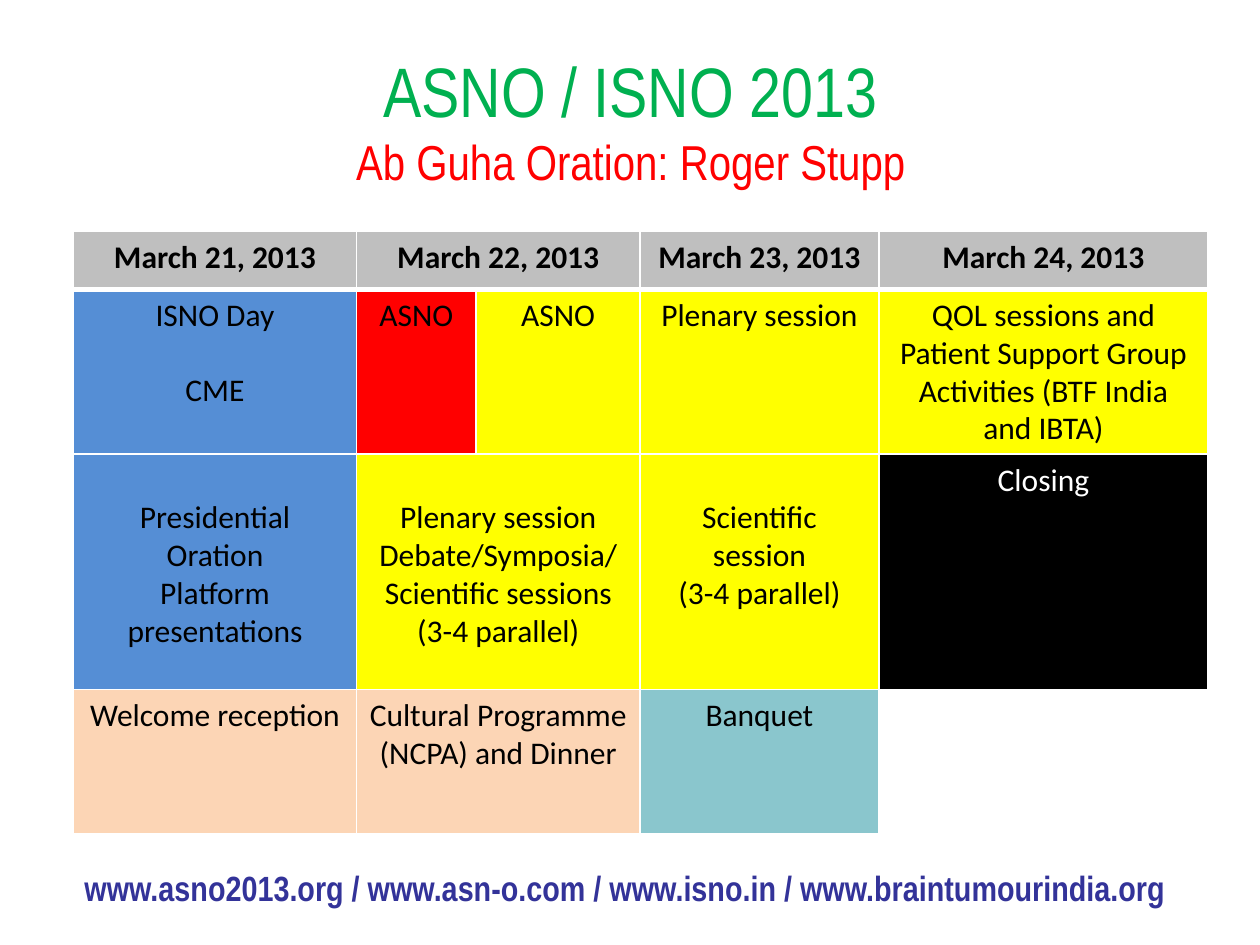
from lxml import etree
from pptx import Presentation
from pptx import util as u
from pptx.dml.color import RGBColor
from pptx.enum import shapes, text
from pptx.oxml.ns import qn


def color(value):
    return RGBColor.from_string(value)


def write(frame, words, size=18, font="Calibri", ink="000000", bold=False, spacing=None, gap=0):
    frame.word_wrap = True
    for i, line in enumerate(words.split("\n")):
        paragraph = frame.paragraphs[0]
        if paragraph.runs:
            paragraph = frame.add_paragraph()
        paragraph.alignment = text.PP_ALIGN.CENTER
        if spacing:
            paragraph.line_spacing = spacing
        if i and gap:
            paragraph.space_before = u.Pt(gap)
        run = paragraph.add_run()
        run.text = line
        run.font.size = u.Pt(size)
        run.font.name = font
        run.font.bold = bold
        run.font.color.rgb = color(ink)


deck = Presentation()
deck.slide_width, deck.slide_height = u.Cm(25.4), u.Cm(19.05)
slide = deck.slides.add_slide(deck.slide_layouts[6])

heading = slide.shapes.add_shape(
    shapes.MSO_SHAPE.RECTANGLE, u.Cm(1.09), u.Cm(0.81), u.Cm(23.24), u.Cm(3.18))
heading.shadow.inherit = False
heading.fill.solid()
heading.fill.fore_color.rgb = color("FFFFFF")
heading.line.fill.background()
heading.text_frame.vertical_anchor = text.MSO_ANCHOR.MIDDLE
write(heading.text_frame, "ASNO / ISNO 2013", size=40, font="Arial Narrow", ink="00B050")
write(heading.text_frame, "Ab Guha Oration: Roger Stupp", size=28, font="Arial Narrow", ink="FF0000")

GREY, BLUE, RED, YELLOW = "BFBFBF", "558ED5", "FF0000", "FFFF00"
BLACK, PEACH, TEAL, WHITE = "000000", "FCD5B5", "8AC6CD", "FFFFFF"
programme = [
    [("March 21, 2013", GREY), ("March 22, 2013", GREY), None,
     ("March 23, 2013", GREY), ("March 24, 2013", GREY)],
    [("ISNO Day\nCME", BLUE), ("ASNO", RED), ("ASNO", YELLOW), ("Plenary session", YELLOW),
     ("QOL sessions and Patient Support Group\nActivities (BTF India and IBTA)", YELLOW)],
    [("Presidential\nOration\nPlatform presentations", BLUE),
     ("Plenary session\nDebate/Symposia/\nScientific sessions\n(3-4 parallel)", YELLOW), None,
     ("Scientific session\n(3-4 parallel)", YELLOW), ("Closing", BLACK)],
    [("Welcome reception", PEACH), ("Cultural Programme\n(NCPA) and Dinner", PEACH), None,
     ("Banquet", TEAL), ("", WHITE)],
]
day_widths = [5.71, 2.41, 3.3, 4.82, 6.63]
session_heights = [1.17, 3.23, 4.75, 2.9]

schedule = slide.shapes.add_table(
    4, 5, u.Cm(1.48), u.Cm(4.66), u.Cm(sum(day_widths)), u.Cm(sum(session_heights))).table
schedule.horz_banding = False
schedule.first_row = False
for column, width in zip(schedule.columns, day_widths):
    column.width = u.Cm(width)
for row, height in zip(schedule.rows, session_heights):
    row.height = u.Cm(height)

for r, sessions in enumerate(programme):
    for c, session in enumerate(sessions):
        cell = schedule.cell(r, c)
        properties = cell._tc.get_or_add_tcPr()
        for side in "LRTB":
            thick = (r, side) in [(0, "B"), (1, "T")]
            edge = etree.SubElement(properties, qn(f"a:ln{side}"), w=str(u.Pt(3 if thick else 1)))
            edge_fill = etree.SubElement(edge, qn("a:solidFill"))
            etree.SubElement(edge_fill, qn("a:srgbClr"), val=WHITE)
        if session is None:
            schedule.cell(r, c - 1).merge(cell)
            continue
        words, fill = session
        cell.fill.solid()
        cell.fill.fore_color.rgb = color(fill)
        lowered = r == 2 and fill != BLACK
        cell.margin_top = u.Cm(0.91 if lowered else 0.15)
        if words:
            write(cell.text_frame, words, ink=WHITE if fill == BLACK else BLACK, bold=r == 0,
                  spacing=0.98, gap=21.5 if words.startswith("ISNO") else 0)

websites = slide.shapes.add_textbox(u.Cm(1.07), u.Cm(17.35), u.Cm(23.06), u.Cm(1.12))
write(websites.text_frame,
      "www.asno2013.org / www.asn-o.com / www.isno.in / www.braintumourindia.org",
      size=20, font="Arial Narrow", ink="333399", bold=True)

deck.save("out.pptx")
